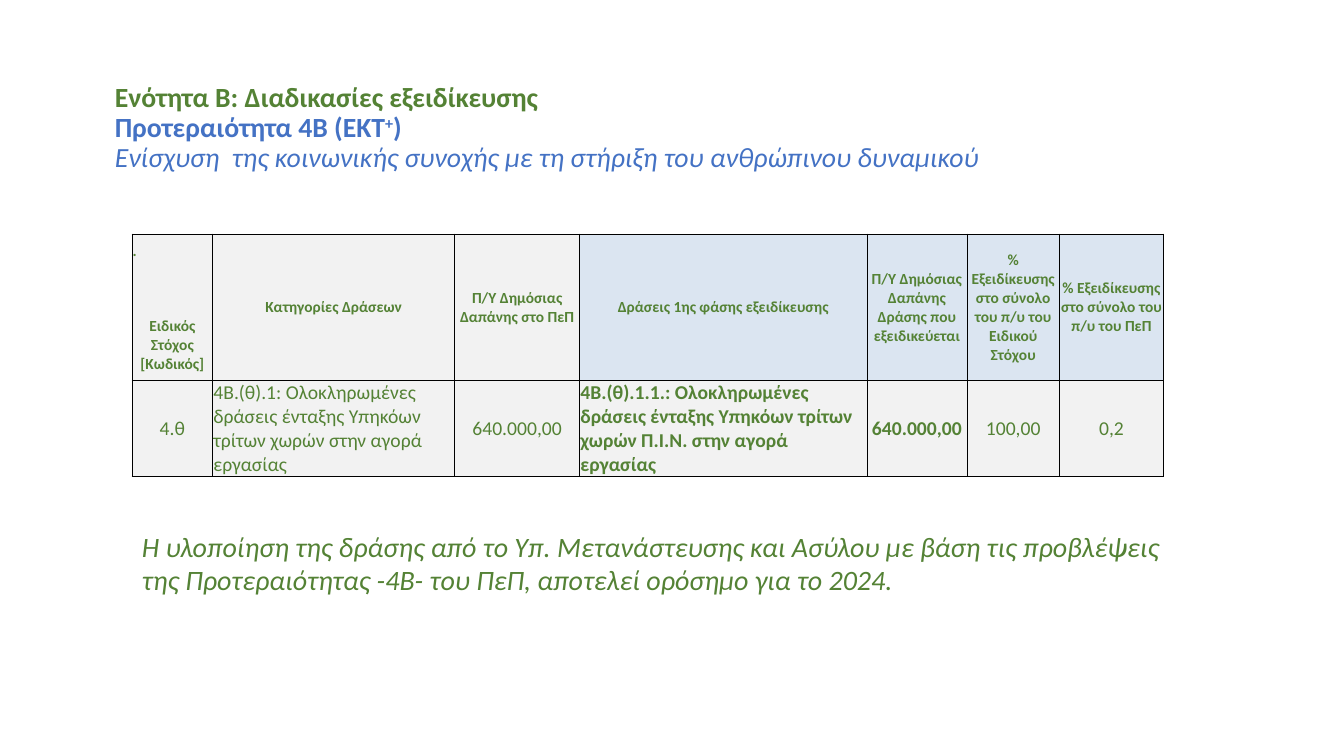
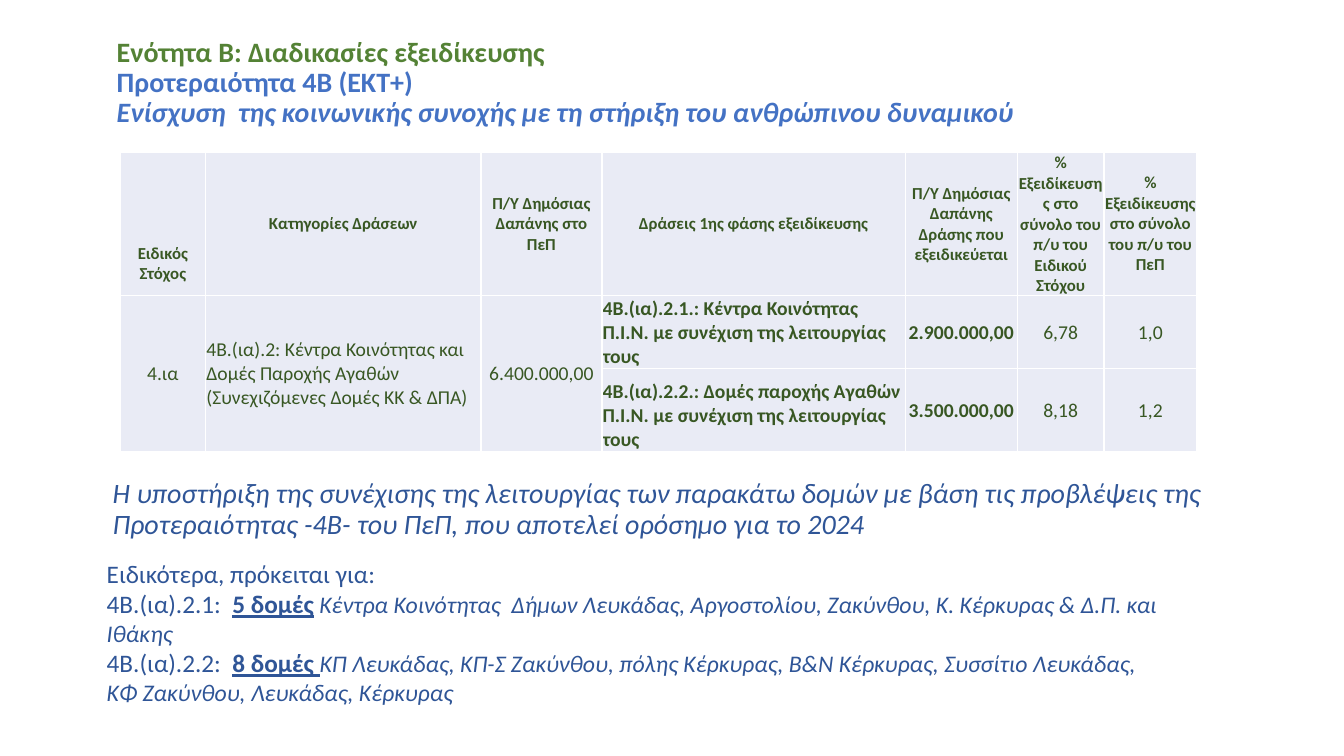
from pptx import Presentation
from pptx.dml.color import RGBColor
from pptx.enum.text import MSO_ANCHOR, PP_ALIGN
from pptx.oxml.ns import qn
from pptx.util import Inches, Pt
from lxml import etree

LEFT, CENTER = PP_ALIGN.LEFT, PP_ALIGN.CENTER
TOP, MIDDLE, BOTTOM = MSO_ANCHOR.TOP, MSO_ANCHOR.MIDDLE, MSO_ANCHOR.BOTTOM

GREEN = RGBColor(0x54, 0x82, 0x35)
DARK_GREEN = RGBColor(0x38, 0x57, 0x23)
BLUE = RGBColor(0x44, 0x72, 0xC4)
DARK_BLUE = RGBColor(0x2F, 0x55, 0x97)
GREY = RGBColor(0xF2, 0xF2, 0xF2)
PALE_BLUE = RGBColor(0xDB, 0xE5, 0xF1)
LAVENDER = RGBColor(0xE9, 0xEB, 0xF5)
BLACK = RGBColor(0x00, 0x00, 0x00)
WHITE = RGBColor(0xFF, 0xFF, 0xFF)

HEADINGS = [
    "Κατηγορίες Δράσεων",
    "Π/Υ Δημόσιας Δαπάνης στο ΠεΠ",
    "Δράσεις 1ης φάσης εξειδίκευσης",
    "Π/Υ Δημόσιας Δαπάνης Δράσης που εξειδικεύεται",
    "% Εξειδίκευσης στο σύνολο του π/υ του Ειδικού Στόχου",
    "% Εξειδίκευσης στο σύνολο του π/υ του ΠεΠ",
]
CATEGORY, ACTION, ACTION_BUDGET = 1, 3, 4


class Deck:
    """Slides drawn on a grid of 0.1 inch cells, in one shared style."""

    FONT = "Calibri"
    CELL = Inches(0.1)
    CELL_INSET = Pt(0.5)

    def __init__(self):
        self.prs = Presentation()
        self.prs.slide_width, self.prs.slide_height = Inches(13.33), Inches(7.5)
        self.slide = None

    def grid(self, *cells):
        return [round(count * self.CELL) for count in cells]

    def new_slide(self):
        self.slide = self.prs.slides.add_slide(self.prs.slide_layouts[6])

    def run(self, paragraph, text, size, color, bold=False, italic=False,
            underline=False, raised=False):
        for number, line in enumerate(text.split("\n")):
            if number:
                paragraph.add_line_break()
            run = paragraph.add_run()
            run.text = line
            font = run.font
            font.name, font.size, font.color.rgb = self.FONT, Pt(size), color
            font.bold, font.italic, font.underline = bold, italic, underline
            if raised:
                run._r.get_or_add_rPr().set("baseline", "30000")

    def text(self, box, paragraphs, anchor=TOP, spacing=1.0):
        frame = self.slide.shapes.add_textbox(*self.grid(*box)).text_frame
        frame.word_wrap = True
        frame.vertical_anchor = anchor
        for number, runs in enumerate(paragraphs):
            paragraph = frame.add_paragraph() if number else frame.paragraphs[0]
            paragraph.line_spacing = spacing
            for words, style in runs:
                self.run(paragraph, words, **style)

    def title(self, left, top, size, priority, bold_theme):
        section = dict(size=size, color=GREEN, bold=True)
        heading = dict(size=size, color=BLUE, bold=True)
        theme = dict(size=size, color=BLUE, bold=bold_theme, italic=True)
        self.text((left, top, 115, 10), [
            [("Ενότητα Β: Διαδικασίες εξειδίκευσης", section)],
            [(words, dict(heading, raised=raised)) for words, raised in priority],
            [("Ενίσχυση  της κοινωνικής συνοχής με τη στήριξη του ανθρώπινου δυναμικού",
              theme)],
        ], spacing=0.9)

    def border(self, cell, color, width):
        properties = cell._tc.get_or_add_tcPr()
        for position, side in enumerate(("a:lnL", "a:lnR", "a:lnT", "a:lnB")):
            line = etree.Element(qn(side), w=str(Pt(width)))
            fill = etree.SubElement(line, qn("a:solidFill"))
            etree.SubElement(fill, qn("a:srgbClr"), val=str(color))
            properties.insert(position, line)

    def cell(self, cell, paragraphs, fill, line, align, anchor, **style):
        cell.fill.solid()
        cell.fill.fore_color.rgb = fill
        self.border(cell, *line)
        cell.margin_left = cell.margin_right = cell.margin_top = self.CELL_INSET
        cell.margin_bottom = 0
        cell.vertical_anchor = anchor
        for number, words in enumerate(paragraphs):
            frame = cell.text_frame
            paragraph = frame.add_paragraph() if number else frame.paragraphs[0]
            paragraph.alignment = align
            self.run(paragraph, words, **style)

    def table(self, corner, widths, heights, goal, body, header_size, color,
              header_fills, body_fill, line, goal_inset, action_anchor=MIDDLE):
        box = self.grid(*corner, sum(widths), sum(heights))
        table = self.slide.shapes.add_table(len(heights), len(widths), *box).table
        table.first_row = table.horz_banding = False
        for column, width in zip(table.columns, self.grid(*widths)):
            column.width = width
        for row, height in zip(table.rows, self.grid(*heights)):
            row.height = height
        headers = [goal] + [[heading] for heading in HEADINGS]
        for col, (words, fill) in enumerate(zip(headers, header_fills)):
            self.cell(table.cell(0, col), words, fill, line, CENTER,
                      MIDDLE if col else BOTTOM,
                      size=header_size, color=color, bold=True)
        table.cell(0, 0).margin_bottom = self.grid(goal_inset)[0]
        for row, values in enumerate(body, 1):
            for col, value in enumerate(values):
                self.cell(table.cell(row, col), [value] if value else [],
                          body_fill, line,
                          LEFT if col in (CATEGORY, ACTION) else CENTER,
                          action_anchor if col == ACTION else MIDDLE,
                          size=14, color=color, bold=col in (ACTION, ACTION_BUDGET))
        for col in range(ACTION):
            if len(body) > 1:
                table.cell(1, col).merge(table.cell(len(body), col))
        return table


def integration_slide(deck):
    deck.new_slide()
    deck.title(10.4, 7.8, 19.8,
               [("Προτεραιότητα 4Β (ΕΚΤ", False), ("+", True), (")", False)], False)
    table = deck.table(
        (13.1, 23.2), [8, 24, 12.4, 28.5, 9.9, 9.2, 10.3], [14.5, 9.6],
        [".", "Ειδικός Στόχος\n[Κωδικός]"],
        [["4.θ",
          "4Β.(θ).1: Ολοκληρωμένες δράσεις ένταξης Υπηκόων τρίτων χωρών στην αγορά εργασίας",
          "640.000,00",
          "4Β.(θ).1.1.: Ολοκληρωμένες δράσεις ένταξης Υπηκόων τρίτων χωρών Π.Ι.Ν. "
          "στην αγορά εργασίας",
          "640.000,00", "100,00", "0,2"]],
        11, GREEN, [GREY] * 3 + [PALE_BLUE] * 4, GREY, (BLACK, 0.5), 0.6)
    dot, goal = table.cell(0, 0).text_frame.paragraphs
    dot.alignment = LEFT
    goal.space_before = Pt(40)
    deck.text((13.1, 52, 104.6, 7.7), [[
        ("Η υλοποίηση της δράσης από το Υπ. Μετανάστευσης και Ασύλου με βάση τις "
         "προβλέψεις της Προτεραιότητας -4Β- του ΠεΠ, αποτελεί ορόσημο για το 2024.",
         dict(size=20, color=GREEN, italic=True))]])


def community_slide(deck):
    deck.new_slide()
    deck.title(10.6, 3.3, 20, [("Προτεραιότητα 4Β (ΕΚΤ+)", False)], True)
    deck.table(
        (11.9, 15.1), [8.5, 27.3, 12, 30.1, 11.1, 8.6, 9.2], [14.2, 7.3, 8.2],
        ["Ειδικός Στόχος"],
        [["4.ια",
          "4Β.(ια).2: Κέντρα Κοινότητας και Δομές Παροχής Αγαθών "
          "(Συνεχιζόμενες Δομές ΚΚ & ΔΠΑ)",
          "6.400.000,00",
          "4Β.(ια).2.1.: Κέντρα Κοινότητας Π.Ι.Ν. με συνέχιση της λειτουργίας τους",
          "2.900.000,00", "6,78", "1,0"],
         [None, None, None,
          "4Β.(ια).2.2.: Δομές παροχής Αγαθών Π.Ι.Ν. με συνέχιση της λειτουργίας τους",
          "3.500.000,00", "8,18", "1,2"]],
        12, DARK_GREEN, [LAVENDER] * 7, LAVENDER, (WHITE, 1), 1.1, BOTTOM)
    deck.text((10.2, 46.3, 115, 8.6), [[
        ("Η υποστήριξη της συνέχισης της λειτουργίας των παρακάτω δομών με βάση τις "
         "προβλέψεις της Προτεραιότητας -4Β- του ΠεΠ, που αποτελεί ορόσημο για το 2024",
         dict(size=20, color=DARK_BLUE, italic=True))]], MIDDLE, 0.9)
    plain = dict(size=18, color=DARK_BLUE)
    count = dict(plain, bold=True, underline=True)
    places = dict(size=17, color=DARK_BLUE, italic=True)
    deck.text((9.6, 54.9, 109.2, 15.8), [
        [("Ειδικότερα, πρόκειται για:", plain)],
        [("4Β.(ια).2.1:  ", plain), ("5 δομές", count),
         (" Kέντρα Κοινότητας  Δήμων Λευκάδας, Αργοστολίου, Ζακύνθου, "
          "Κ. Κέρκυρας & Δ.Π. και Ιθάκης", places)],
        [("4Β.(ια).2.2:  ", plain), ("8 δομές ", count),
         ("ΚΠ Λευκάδας, ΚΠ-Σ Ζακύνθου, πόλης Κέρκυρας, Β&Ν Κέρκυρας, "
          "Συσσίτιο Λευκάδας,\nΚΦ Ζακύνθου, Λευκάδας, Κέρκυρας", places)],
    ])


def main():
    deck = Deck()
    integration_slide(deck)
    community_slide(deck)
    deck.prs.save("out.pptx")


if __name__ == "__main__":
    main()
